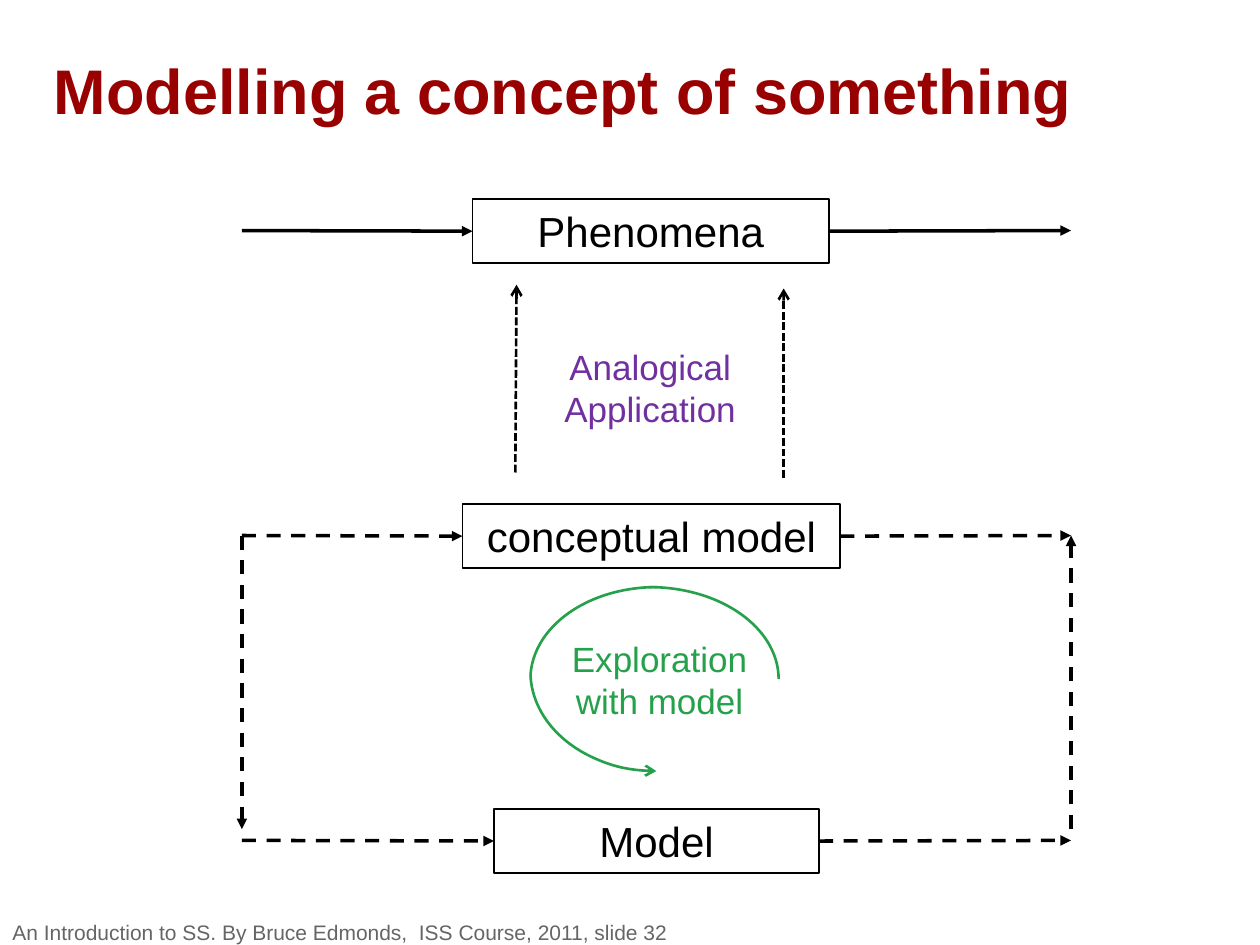
"""Build the slide on modelling a concept of something."""
from lxml import etree
from pptx import Presentation
from pptx import util as u
from pptx.dml.color import RGBColor
from pptx.enum import dml, shapes, text
from pptx.oxml.ns import qn

COLORS = {"title": "990000", "ink": "000000", "explore": "25A14B",
          "analogy": "7030A0", "footer": "656565"}
DASH, DOTS = dml.MSO_LINE.DASH, dml.MSO_LINE.SQUARE_DOT
MIDDLE, TOP = text.MSO_ANCHOR.MIDDLE, text.MSO_ANCHOR.TOP
LEFT, CENTER = text.PP_ALIGN.LEFT, text.PP_ALIGN.CENTER

prs = Presentation()
prs.slide_width, prs.slide_height = u.Inches(10), u.Inches(7.5)
slide = prs.slides.add_slide(prs.slide_layouts[6])


def write(s, words, size, color, align=CENTER, anchor=TOP, wrap=True, bold=False):
    """Fill a shape with one formatted paragraph."""
    tf = s.text_frame
    tf.word_wrap, tf.vertical_anchor = wrap, anchor
    p = tf.paragraphs[0]
    p.text, p.alignment = words, align
    font = {"name": "Arial", "size": u.Pt(size), "bold": bold}
    for r in p.runs:
        for key, value in font.items():
            setattr(r.font, key, value)
        r.font.color.rgb = RGBColor.from_string(COLORS[color])


def arrow(x1, y1, x2, y2, width=2, dash=None, tip="triangle"):
    """Draw a straight arrow and return its connector."""
    ends = [u.Inches(v) for v in (x1, y1, x2, y2)]
    s = slide.shapes.add_connector(shapes.MSO_CONNECTOR.STRAIGHT, *ends)
    s.line.color.rgb = RGBColor.from_string(COLORS["ink"])
    s.line.width = u.Pt(width)
    if dash:
        s.line.dash_style = dash
    etree.SubElement(s.line._get_or_add_ln(), qn("a:tailEnd"), type=tip)
    etree.SubElement(s._element.spPr, qn("a:effectLst"))
    return s


x_start, x_end = 1.92, 8.5
for name, left, top, width, dash in [("Phenomena", 3.75, 1.58, 2.83, None),
                                     ("conceptual model", 3.67, 4, 3, DASH),
                                     ("Model", 3.92, 6.42, 2.58, DASH)]:
    at = [u.Inches(v) for v in (left, top, width, 0.51)]
    box = slide.shapes.add_shape(shapes.MSO_SHAPE.RECTANGLE, *at)
    box.shadow.inherit = False
    box.fill.background()
    box.line.color.rgb = RGBColor.from_string(COLORS["ink"])
    box.line.width = u.Pt(1)
    write(box, name, 24, "ink")
    y = top + 0.25
    arrow(x_start, y, left, y, dash=dash).end_connect(box, 1)
    arrow(left + width, y, x_end, y, dash=dash).begin_connect(box, 3)

arrow(x_start, 4.25, x_start, 6.58, dash=DASH)
arrow(x_end, 6.58, x_end, 4.25, dash=DASH)
arrow(4.09, 3.75, 4.1, 2.26, 1.5, DOTS, "arrow")
arrow(6.22, 3.79, 6.22, 2.29, 1.5, DOTS, "arrow")

for left, top, width, height, flips, end in [
        (4.13, 4.66, 2.05, 1.46, [], 0),
        (4.21, 4.66, 2, 1.46, ["flipH"], 214.99),
        (4.21, 4.54, 2, 1.58, ["flipH", "flipV"], 214.99)]:
    at = [u.Inches(v) for v in (left, top, width, height)]
    arc = slide.shapes.add_shape(shapes.MSO_SHAPE.ARC, *at)
    arc.adjustments[0], arc.adjustments[1] = 162, end
    arc.shadow.inherit = False
    arc.fill.background()
    arc.line.color.rgb = RGBColor.from_string(COLORS["explore"])
    arc.line.width = u.Pt(1.5)
    for flip in flips:
        arc._element.spPr.xfrm.set(flip, "1")
    if "flipV" in flips:
        etree.SubElement(arc.line._get_or_add_ln(), qn("a:headEnd"), type="arrow")

for at, words, size, color, style in [
        ((0.33, 0.25, 8.42, 0.92), "Modelling a concept of something", 36, "title",
         {"align": LEFT, "anchor": MIDDLE, "bold": True}),
        ((4.25, 5.01, 1.97, 0.77), "Exploration with model", 20, "explore", {}),
        ((4.37, 2.69, 1.58, 0.77), "Analogical\vApplication", 20, "analogy",
         {"wrap": False}),
        ((0, 7.29, 10, 0.21),
         "An Introduction to SS. By Bruce Edmonds,  ISS Course, 2011, slide 32",
         12, "footer", {"align": LEFT, "anchor": MIDDLE})]:
    s = slide.shapes.add_textbox(*[u.Inches(v) for v in at])
    write(s, words, size, color, **style)

prs.save("out.pptx")
